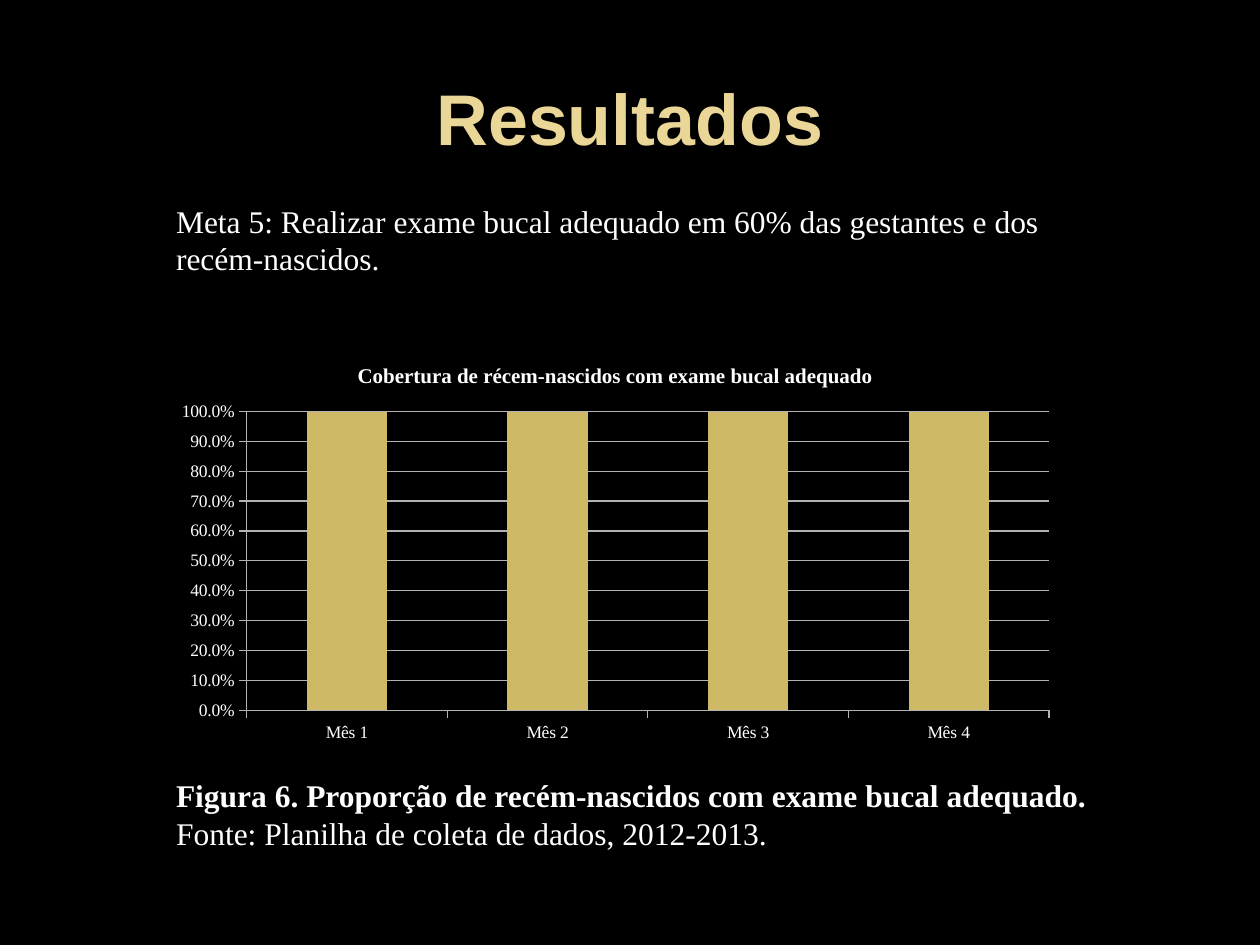
from pptx import Presentation
from pptx import util as u
from pptx.chart.data import CategoryChartData
from pptx.dml.color import RGBColor
from pptx.enum import chart as charts, text

SERIF = "Times New Roman"
WHITE, GOLD, PALE_GOLD, GREY = "FFFFFF", "CEB966", "EAD696", "B3B3B3"
LEFT = u.Cm(3.3)


def paint(fill, color):
    """Give a fill one solid colour."""
    fill.solid()
    fill.fore_color.rgb = RGBColor.from_string(color)


def style(font, name, size, color, bold=False):
    """Set the typeface, size, colour and weight of a font."""
    font.name, font.size, font.bold = name, u.Pt(size), bold
    paint(font.fill, color)


def add_title(slide, wording):
    """Place and format the title placeholder."""
    title = slide.shapes.title
    title.left, title.top = u.Cm(1.27), u.Cm(0.76)
    title.width, title.height = u.Cm(22.86), u.Cm(3.18)
    title.text_frame.text = wording
    title.text_frame.vertical_anchor = text.MSO_ANCHOR.MIDDLE
    heading = title.text_frame.paragraphs[0]
    heading.alignment = text.PP_ALIGN.CENTER
    style(heading.font, "Arial", 41, PALE_GOLD, True)


def add_body(slide, top, width, height, lines):
    """Add a text box from pairs of wording and boldness."""
    frame = slide.shapes.add_textbox(LEFT, top, width, height).text_frame
    frame.word_wrap = True
    frame.auto_size = text.MSO_AUTO_SIZE.SHAPE_TO_FIT_TEXT
    frame.text = "\n".join(wording for wording, _ in lines)
    for paragraph, (_, bold) in zip(frame.paragraphs, lines):
        style(paragraph.font, SERIF, 18, WHITE, bold)


def style_axis(axis):
    """Give an axis outward ticks and grey lines."""
    axis.major_tick_mark = charts.XL_TICK_MARK.OUTSIDE
    axis.minor_tick_mark = charts.XL_TICK_MARK.NONE
    paint(axis.format.line.fill, GREY)


def add_coverage_chart(slide, heading, months, shares):
    """Add the column chart of monthly coverage."""
    coverage = CategoryChartData(number_format="0.0%")
    coverage.categories = months
    coverage.add_series(heading, shares)
    chart = slide.shapes.add_chart(
        charts.XL_CHART_TYPE.COLUMN_CLUSTERED,
        LEFT, u.Cm(6.93), u.Cm(18.21), u.Cm(8.2), coverage).chart
    style(chart.font, SERIF, 10, WHITE)
    chart.has_legend = False
    chart.chart_title.text_frame.text = heading
    chart.chart_title.include_in_layout = False
    style(chart.chart_title.text_frame.paragraphs[0].font, SERIF, 12, WHITE, True)

    plot = chart.plots[0]
    plot.gap_width, plot.vary_by_categories = 150, False
    paint(plot.series[0].format.fill, GOLD)

    style_axis(chart.category_axis)
    scale = chart.value_axis
    style_axis(scale)
    scale.minimum_scale, scale.maximum_scale, scale.major_unit = 0, 1, 0.1
    scale.tick_labels.number_format = "0.0%"
    scale.tick_labels.number_format_is_linked = False
    scale.has_major_gridlines = True
    paint(scale.major_gridlines.format.line.fill, GREY)


def main():
    """Build the results slide and save it."""
    deck = Presentation()
    deck.slide_width, deck.slide_height = u.Cm(25.4), u.Cm(19.05)
    slide = deck.slides.add_slide(deck.slide_layouts[5])
    paint(slide.background.fill, "000000")
    add_title(slide, "Resultados")
    add_coverage_chart(
        slide, "Cobertura de récem-nascidos com exame bucal adequado",
        [f"Mês {month}" for month in range(1, 5)], [1] * 4)
    add_body(slide, u.Cm(3.94), u.Cm(18), u.Cm(1.8), [
        ("Meta 5: Realizar exame bucal adequado em 60% das gestantes "
         "e dos recém-nascidos.", False)])
    add_body(slide, u.Cm(15.52), u.Cm(19.2), u.Cm(2.57), [
        ("Figura 6. Proporção de recém-nascidos com exame bucal adequado.", True),
        ("Fonte: Planilha de coleta de dados, 2012-2013.", False)])
    deck.save("out.pptx")


if __name__ == "__main__":
    main()
